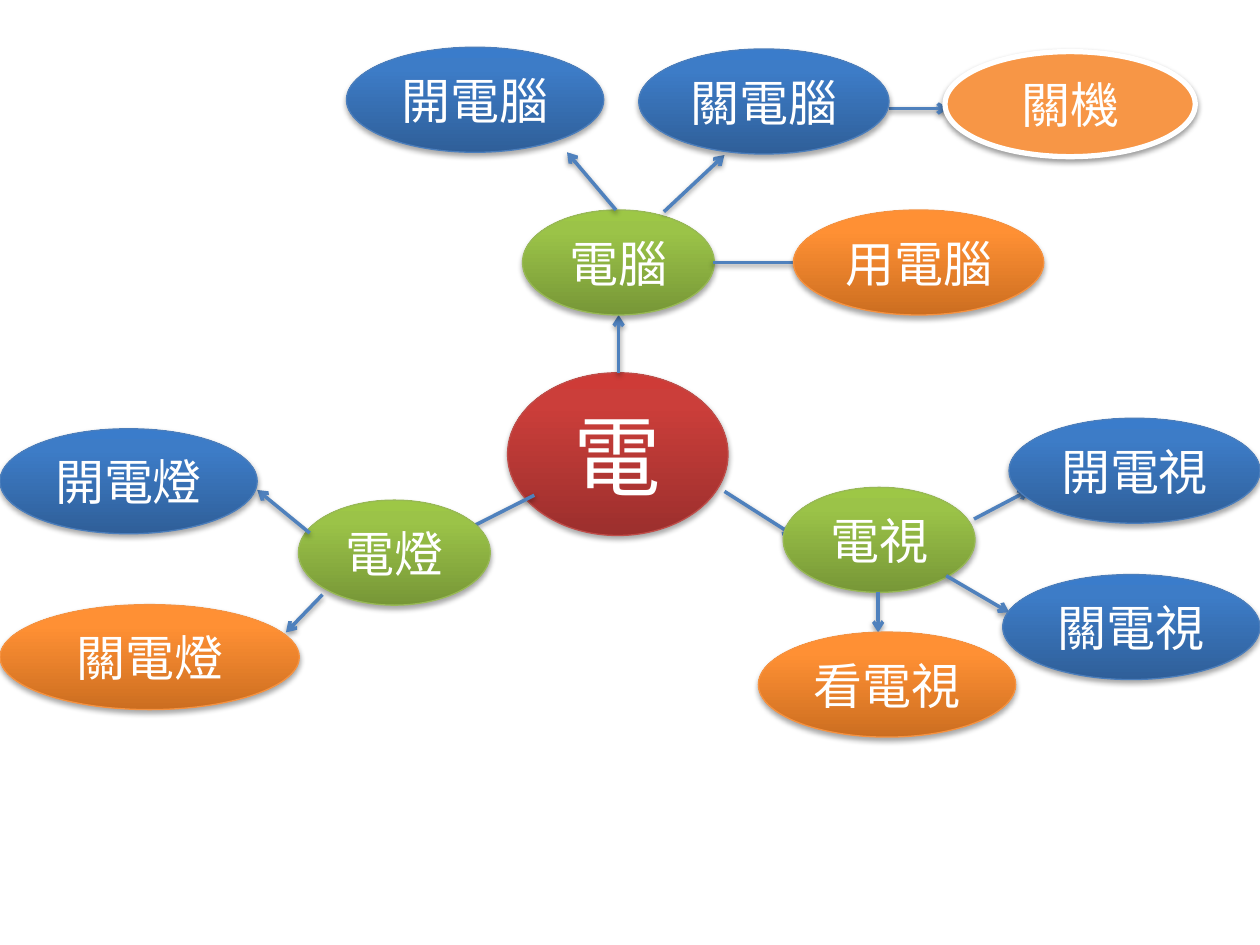
from copy import deepcopy
from dataclasses import dataclass
from lxml.etree import SubElement as Sub
from pptx import Presentation
from pptx.dml.color import RGBColor as Rgb
from pptx.enum.shapes import MSO_CONNECTOR as Link, MSO_SHAPE as Form
from pptx.enum.text import MSO_ANCHOR as Anchor, PP_ALIGN as Align
from pptx.oxml.ns import qn
from pptx.util import Pt


@dataclass(frozen=True)
class Theme:
    font: str = "Calibri"
    big: float = 50
    small: float = 28
    ink: str = "FFFFFF"
    wire: str = "4F81BD"
    shade: str = "000000"
    flat: str = "F79646"
    red: tuple = ("9C2F2D", "CB3E3A", "CE3B37", "BF4C48")
    green: tuple = ("779737", "9BC348", "9DC746", "98B955")
    blue: tuple = ("2F5F99", "3D7CC7", "3A7CCB", "4B7EBC")
    gold: tuple = ("CC6E20", "FF9034", "FF9136", "F69240")


T = Theme()
HUB = (109.6, 60)
HIGH = 60


def cast(fx, alpha, dist):
    drop = Sub(fx, qn("a:outerShdw"), blurRad=str(Pt(3.1)), dist=str(Pt(dist)),
               dir="5400000", rotWithShape="0")
    tone = Sub(drop, qn("a:srgbClr"), val=T.shade)
    Sub(tone, qn("a:alpha"), val=str(alpha * 1000))


def blend(fill, tones):
    fill.gradient()
    fill.gradient_angle = 90
    first = fill._xPr.find(".//" + qn("a:gs"))
    first.addnext(deepcopy(first))
    for stop, tone, spot in zip(fill.gradient_stops, tones, (0, 0.8, 1)):
        stop.color.rgb = Rgb.from_string(tone)
        stop.position = spot


def oval(page, box, text, hue, size=T.small):
    node = page.shapes.add_shape(Form.OVAL, *map(Pt, box))
    plain = hue == T.flat
    if plain:
        node.fill.solid()
        node.fill.fore_color.rgb = Rgb.from_string(hue)
    else:
        blend(node.fill, hue)
    node.line.color.rgb = Rgb.from_string(T.ink if plain else hue[3])
    node.line.width = Pt(3 if plain else 0.75)
    node.shadow.inherit = False
    fx = node._element.spPr.find(qn("a:effectLst"))
    cast(fx, *((38, 1.6) if plain else (35, 1.8)))
    frame = node.text_frame
    frame.vertical_anchor = Anchor.MIDDLE
    para = frame.paragraphs[0]
    para.alignment = Align.CENTER
    run = para.add_run()
    run.text = text
    run.font.name = T.font
    run.font.size = Pt(size)
    run.font.color.rgb = Rgb.from_string(T.ink)


def arrow(page, x, y, ends):
    x1, y1, x2, y2 = ends
    wire = page.shapes.add_connector(
        Link.STRAIGHT, Pt(x + x1), Pt(y + y1), Pt(x + x2), Pt(y + y2))
    wire.line.color.rgb = Rgb.from_string(T.wire)
    wire.line.width = Pt(2)
    Sub(wire.line._get_or_add_ln(), qn("a:tailEnd"), type="arrow")
    cast(Sub(wire._element.spPr, qn("a:effectLst")), 38, 1.6)


def core(page, box, text, trunks):
    oval(page, box, text, T.red, T.big)
    for ends in trunks:
        arrow(page, *box[:2], ends)


def fan(page, box, text, hub, twigs, leaves):
    x, y = box
    oval(page, (x + hub[0], y + hub[1], *HUB), text, T.green)
    for ends in twigs:
        arrow(page, x, y, ends)
    for word, dx, dy, wide, hue in leaves:
        oval(page, (x + dx, y + dy, wide, HIGH), word, hue)


def main():
    deck = Presentation()
    deck.slide_width, deck.slide_height = Pt(720), Pt(540)
    page = deck.slides.add_slide(deck.slide_layouts[6])
    core(page, (290, 213, 126, 93), "電", [
        (63.5, 0, 63.5, -33),
        (124, 67.8, 163.6, 93),
        (15.3, 70, -25.8, 90.8),
    ])
    fan(page, (198, 27), "電腦", (100.6, 93), [
        (154, 93, 126, 60),
        (181.4, 94, 216, 61.6),
        (209.5, 123, 264, 123),
        (310.3, 35, 344, 35),
    ], [
        ("開電腦", 0, 0, 147, T.blue),
        ("關電腦", 167, 1, 143, T.blue),
        ("用電腦", 255.4, 93, 143, T.gold),
        ("關機", 342, 2.5, 143, T.flat),
    ])
    fan(page, (433.4, 239), "電視", (14.2, 39.5), [
        (107.3, 90, 143.3, 111),
        (123.2, 57.6, 154.8, 41),
        (68.4, 99.5, 68.4, 122.4),
    ], [
        ("開電視", 143.2, 0, 143.4, T.blue),
        ("關電視", 139.6, 89.3, 147, T.blue),
        ("看電視", 0, 122.2, 147, T.gold),
    ])
    fan(page, (0, 245), "電燈", (170.6, 40.8), [
        (177, 59.6, 147, 35),
        (184.3, 94.8, 163.4, 116.4),
    ], [
        ("開電燈", 0, 0, 147, T.blue),
        ("關電燈", 0, 100.5, 171, T.gold),
    ])
    deck.save("out.pptx")


if __name__ == "__main__":
    main()
